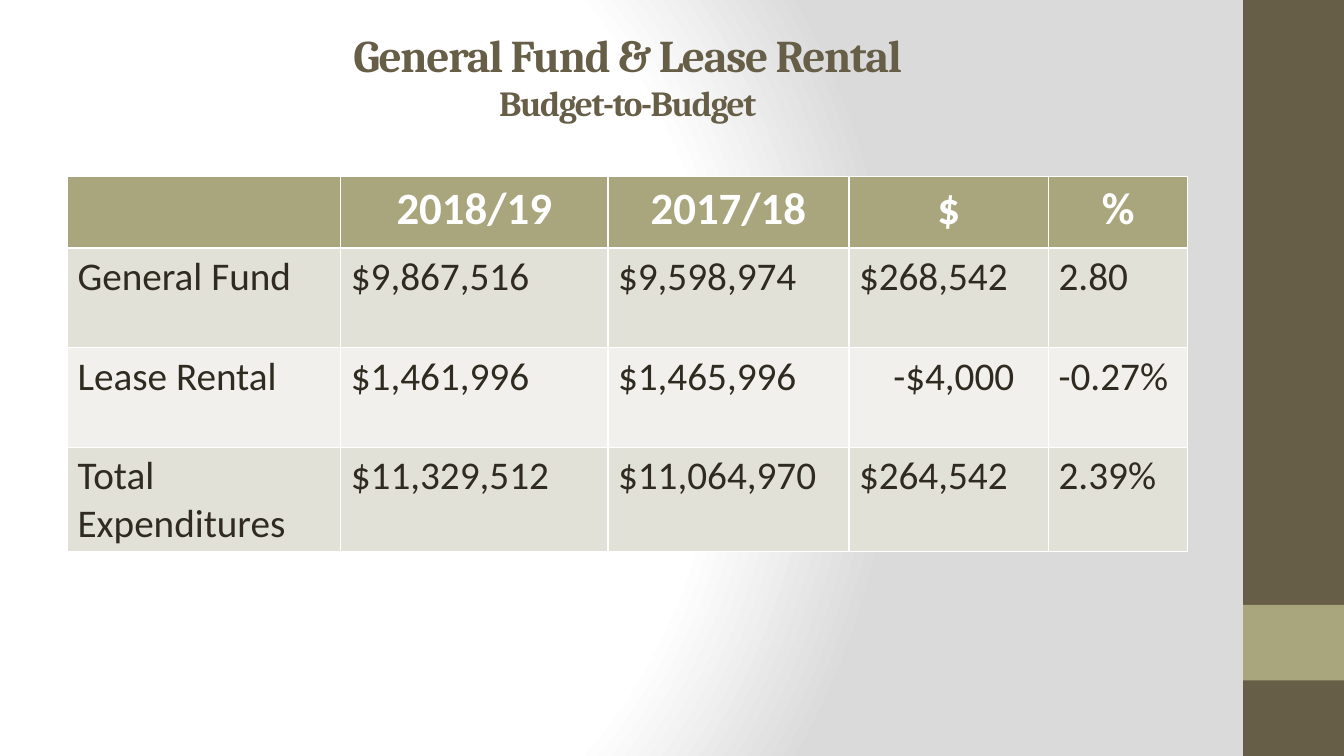
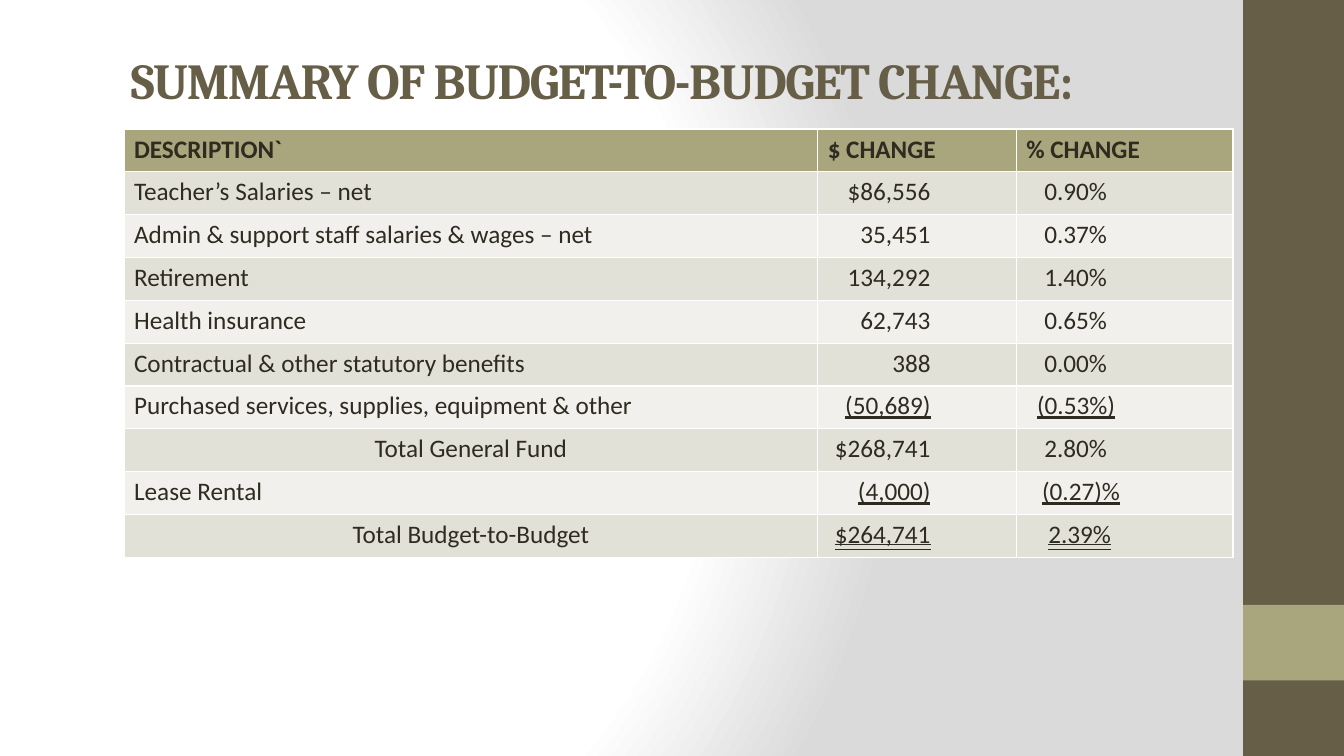
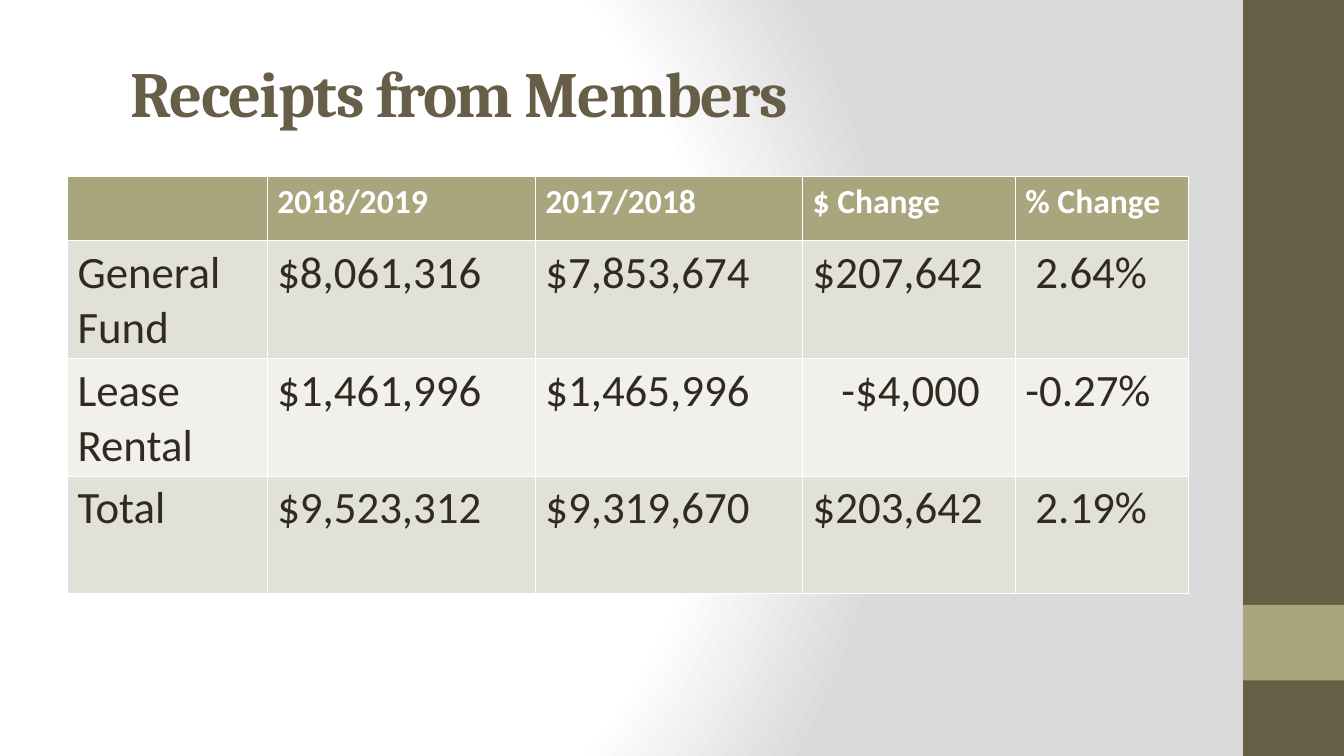
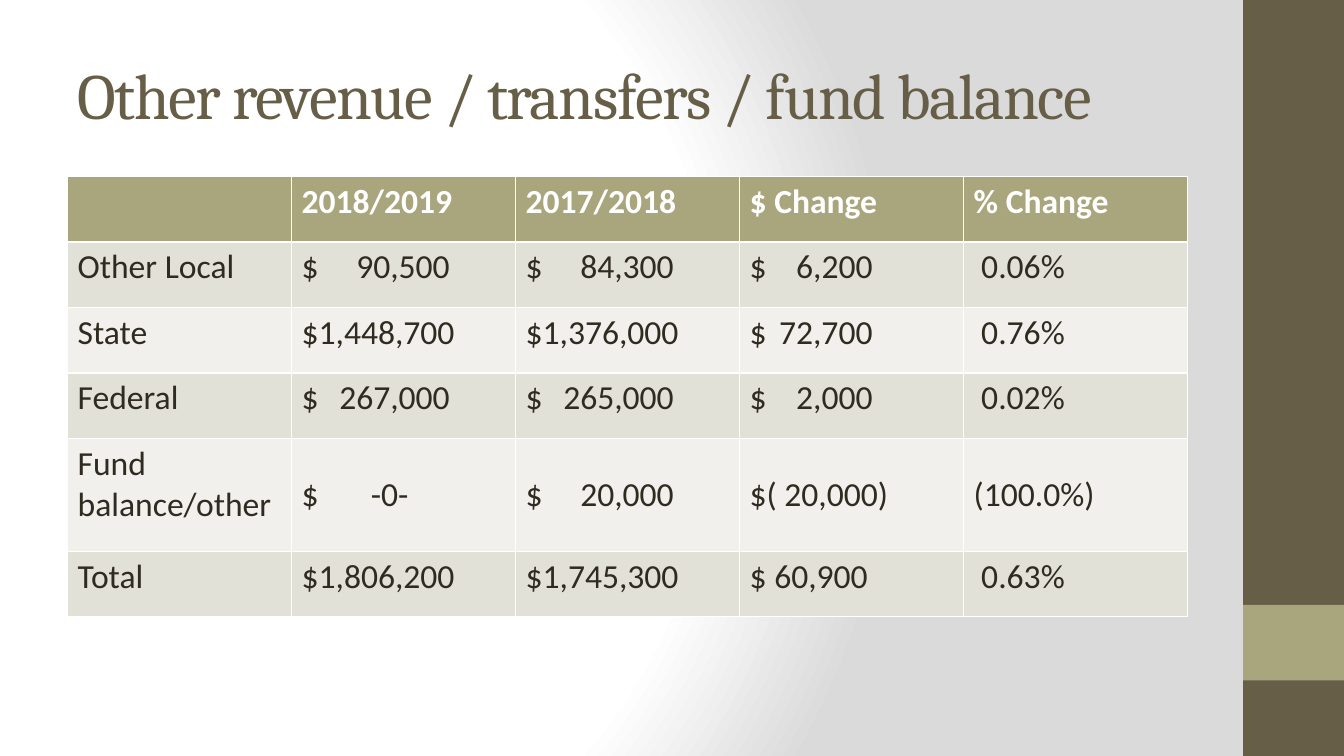
import pptx
import pptx.util
import pptx.dml.color
import pptx.enum.shapes
import pptx.enum.text
import pptx.oxml
import pptx.oxml.ns

Inches = pptx.util.Inches
Pt = pptx.util.Pt
RGBColor = pptx.dml.color.RGBColor
ALIGN = pptx.enum.text.PP_ALIGN
ANCHOR = pptx.enum.text.MSO_ANCHOR
UNDERLINE = pptx.enum.text.MSO_UNDERLINE

# Shared look
BROWN = RGBColor(0x67, 0x5E, 0x47)
OLIVE = RGBColor(0xA9, 0xA5, 0x7C)
INK = RGBColor(0x2F, 0x2B, 0x20)
WHITE = RGBColor(0xFF, 0xFF, 0xFF)
ROW_FILLS = [RGBColor(0xE2, 0xE1, 0xD7), RGBColor(0xF1, 0xF0, 0xEC)]
TITLE_FONT = "Cambria"
BODY_FONT = "Calibri"
BANDS = [(0, 7.5, BROWN), (6, 0.75, OLIVE)]
BACKGROUND = f"""<a:gradFill {pptx.oxml.ns.nsdecls("a")} rotWithShape="1">
  <a:gsLst>
    <a:gs pos="0"><a:srgbClr val="FFFFFF"/></a:gs>
    <a:gs pos="75000"><a:srgbClr val="FFFFFF"/></a:gs>
    <a:gs pos="100000"><a:srgbClr val="DADADA"/></a:gs>
  </a:gsLst>
  <a:path path="circle"><a:fillToRect l="20000" t="50000" r="100000" b="50000"/></a:path>
</a:gradFill>"""

# Content: "tabs" gives the right-aligned tab stop of a column or of a single cell
SLIDES = [
    {
        "title": [("General Fund & Lease Rental", 32.4), ("Budget-to-Budget", 25.2)],
        "title_box": (0.67, 0.3, 11.11, 0.9), "title_align": ALIGN.CENTER,
        "table_at": (0.67, 1.75),
        "columns": [2.71, 2.65, 2.39, 1.98, 1.38],
        "rows": [0.71, 0.99, 0.99, 0.99],
        "header_size": 32, "body_size": 28,
        "tabs": {3: 1.54},
        "centered": {(0, column) for column in range(5)},
        "cells": [
            ["", "2018/19", "2017/18", "$", "%"],
            ["General Fund", "$9,867,516", "$9,598,974", "$268,542", "2.80"],
            ["Lease Rental", "$1,461,996", "$1,465,996", "\t-$4,000", "-0.27%"],
            ["Total Expenditures", "$11,329,512", "$11,064,970", "$264,542", "2.39%"],
        ],
    },
    {
        "title": [("SUMMARY OF BUDGET-TO-BUDGET CHANGE:", 36)],
        "title_box": (1.2, 0.31, 11, 0.96),
        "table_at": (1.23, 1.28),
        "columns": [6.88, 1.97, 2.15],
        "rows": [4.25 / 10] * 10,
        "header_size": 18, "body_size": 18, "header_color": INK,
        "tabs": {1: 1.02, 2: 0.8, (6, 2): 0.88, (8, 2): 0.93, (9, 2): 0.84},
        "centered": {(7, 0), (9, 0)},
        "underlines": {
            6: UNDERLINE.SINGLE_LINE,
            8: UNDERLINE.SINGLE_LINE,
            9: UNDERLINE.DOUBLE_LINE,
        },
        "cells": [
            ["DESCRIPTION`", "$ CHANGE", "% CHANGE"],
            ["Teacher’s Salaries – net", "\t$86,556", "\t0.90%"],
            ["Admin & support staff salaries & wages – net", "\t35,451", "\t0.37%"],
            ["Retirement", "\t134,292", "\t1.40%"],
            ["Health insurance", "\t62,743", "\t0.65%"],
            ["Contractual & other statutory benefits", "\t388", "\t0.00%"],
            ["Purchased services, supplies, equipment & other", "\t(50,689)", "\t(0.53%)"],
            ["Total General Fund", "\t$268,741", "\t2.80%"],
            ["Lease Rental", "\t(4,000)", "\t(0.27)%"],
            ["Total Budget-to-Budget", "\t$264,741", "\t2.39%"],
        ],
    },
    {
        "title": [("Receipts from Members", 46)],
        "title_box": (1.2, 0.31, 11, 1.2),
        "table_at": (0.67, 1.75),
        "columns": [1.98, 2.66, 2.65, 2.11, 1.72],
        "rows": [0.64, 0.83, 0.83, 1.16],
        "header_size": 24, "body_size": 32,
        "tabs": {3: 1.66},
        "cells": [
            ["", "2018/2019", "2017/2018", "$ Change", "% Change"],
            ["General Fund", "$8,061,316", "$7,853,674", "$207,642", " 2.64%"],
            ["Lease Rental", "$1,461,996", "$1,465,996", "\t-$4,000", "-0.27%"],
            ["Total", "$9,523,312", "$9,319,670", "$203,642", " 2.19%"],
        ],
    },
    {
        "title": [("Other revenue / transfers / fund balance", 46)],
        "title_box": (0.67, 0.3, 11.11, 1.25), "title_bold": False,
        "table_at": (0.67, 1.75),
        "columns": [11.11 / 5] * 5,
        "rows": [0.65, 0.65, 0.65, 0.65, 1.12, 0.65],
        "header_size": 24, "body_size": 24,
        "tabs": {1: 1.47, 2: 1.47, 3: 1.22, (4, 1): 1.06},
        "middle": {(4, column) for column in range(1, 5)},
        "cells": [
            ["", "2018/2019", "2017/2018", "$ Change", "% Change"],
            ["Other Local", "$\t90,500", "$\t84,300", "$\t6,200", " 0.06%"],
            ["State", "$1,448,700", "$1,376,000", "$\t72,700", " 0.76%"],
            ["Federal", "$\t267,000", "$\t265,000", "$\t2,000", " 0.02%"],
            ["Fund balance/other", "$\t-0-", "$\t20,000", "$( 20,000)", "(100.0%)"],
            ["Total", "$1,806,200", "$1,745,300", "$ 60,900", " 0.63%"],
        ],
    },
]


def style_font(paragraph, name, size, color, bold):
    paragraph.font.name = name
    paragraph.font.size = Pt(size)
    paragraph.font.color.rgb = color
    paragraph.font.bold = bold


def add_right_tab(paragraph, position):
    tab_list = pptx.oxml.parse_xml(
        f'<a:tabLst {pptx.oxml.ns.nsdecls("a")}>'
        f'<a:tab pos="{Inches(position)}" algn="r"/></a:tabLst>')
    paragraph._p.get_or_add_pPr().insert(0, tab_list)


presentation = pptx.Presentation()
presentation.slide_width = Inches(13.33)
presentation.slide_height = Inches(7.5)

# Gradient background on the master
master = presentation.slide_master
master.background.fill.gradient()
gradient = master.element.xpath("p:cSld/p:bg/p:bgPr/a:gradFill")[0]
gradient.getparent().replace(gradient, pptx.oxml.parse_xml(BACKGROUND))

for content in SLIDES:
    slide = presentation.slides.add_slide(presentation.slide_layouts[6])

    # Side bands
    for top, height, color in BANDS:
        band = slide.shapes.add_shape(
            pptx.enum.shapes.MSO_SHAPE.RECTANGLE,
            Inches(12.33), Inches(top), Inches(1), Inches(height))
        band.shadow.inherit = False
        band.fill.solid()
        band.fill.fore_color.rgb = color
        band.line.fill.background()

    # Title
    title = slide.shapes.add_textbox(*[Inches(value) for value in content["title_box"]])
    title.text_frame.word_wrap = True
    title.text_frame.vertical_anchor = ANCHOR.MIDDLE
    title.text_frame.text = "\n".join(text for text, size in content["title"])
    for paragraph, (text, size) in zip(title.text_frame.paragraphs, content["title"]):
        paragraph.alignment = content.get("title_align", ALIGN.LEFT)
        style_font(paragraph, TITLE_FONT, size, BROWN, content.get("title_bold", True))
        paragraph.runs[0].font._element.set("spc", "-100")

    # Table grid
    columns, rows = content["columns"], content["rows"]
    left, top = content["table_at"]
    table = slide.shapes.add_table(
        len(rows), len(columns), Inches(left), Inches(top),
        Inches(sum(columns)), Inches(sum(rows))).table
    for column, width in zip(table.columns, columns):
        column.width = Inches(width)
    for row, height in zip(table.rows, rows):
        row.height = Inches(height)

    # Table cells
    for row_index, texts in enumerate(content["cells"]):
        header = row_index == 0
        size = content["header_size"] if header else content["body_size"]
        color = content.get("header_color", WHITE) if header else INK
        for column_index, text in enumerate(texts):
            place = (row_index, column_index)
            cell = table.cell(*place)
            cell.fill.solid()
            cell.fill.fore_color.rgb = OLIVE if header else ROW_FILLS[(row_index - 1) % 2]
            cell.text = text
            if place in content.get("middle", ()):
                cell.vertical_anchor = ANCHOR.MIDDLE
            paragraph = cell.text_frame.paragraphs[0]
            style_font(paragraph, BODY_FONT, size, color, header)
            if place in content.get("centered", ()):
                paragraph.alignment = ALIGN.CENTER
            if column_index > 0 and row_index in content.get("underlines", {}):
                paragraph.font.underline = content["underlines"][row_index]
            if "\t" in text:
                tabs = content["tabs"]
                add_right_tab(paragraph, tabs.get(place, tabs.get(column_index)))

presentation.save("out.pptx")
